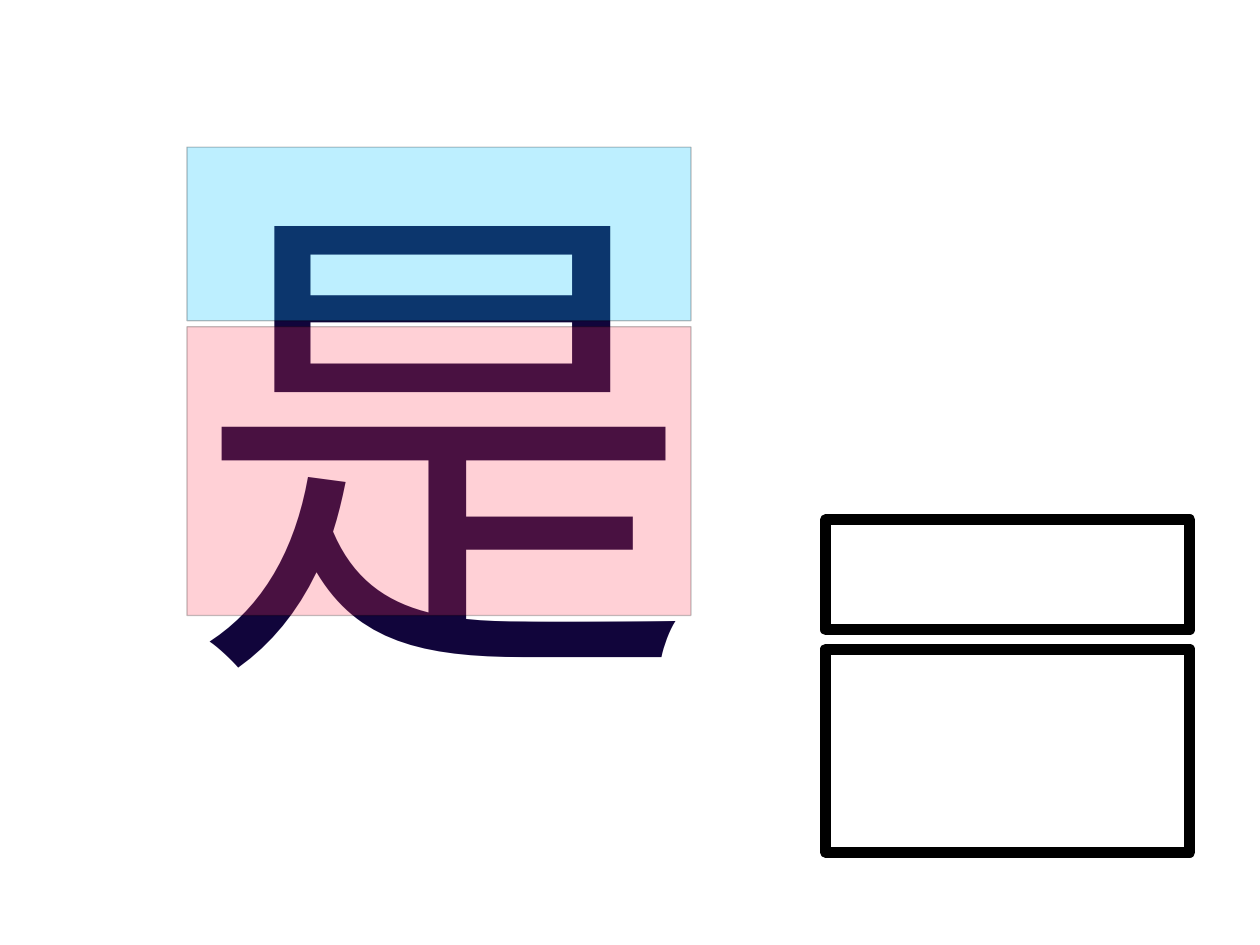
from dataclasses import dataclass
from typing import Optional

from lxml import etree
from pptx import Presentation
from pptx import util as u
from pptx.dml.color import RGBColor
from pptx.enum import shapes, text
from pptx.oxml import ns

BLACK = RGBColor(0x00, 0x00, 0x00)
INK = RGBColor(0x11, 0x05, 0x3B)
SKY = RGBColor(0x00, 0xC5, 0xFF)
ROSE = RGBColor(0xFF, 0x3B, 0x57)
FONT = "Arial"


@dataclass(frozen=True)
class Frame:
    left: float
    top: float
    width: float
    height: float
    line_width: float
    fill: Optional[RGBColor] = None
    opacity: int = 100


FRAMES = [
    Frame(5.36, 4.22, 14.45, 4.98, 1, SKY, 26),
    Frame(5.36, 9.37, 14.45, 8.28, 1, ROSE, 24),
    Frame(23.67, 18.62, 10.44, 5.82, 9),
    Frame(23.67, 14.91, 10.44, 3.15, 9),
]


def add_character(page, character: str) -> None:
    box = page.shapes.add_textbox(u.Cm(5.16), u.Cm(3.4), u.Cm(20.07), u.Cm(14.86))
    frame = box.text_frame
    frame.word_wrap = True
    frame.auto_size = text.MSO_AUTO_SIZE.SHAPE_TO_FIT_TEXT
    frame.margin_left = frame.margin_right = u.Cm(0.2)
    frame.margin_top = frame.margin_bottom = u.Cm(0.2)
    frame.text = character
    para = frame.paragraphs[0]
    para._p.get_or_add_pPr().set("marL", str(u.Cm(0.15)))
    span = para.runs[0]
    span.font.size = u.Pt(408)
    span.font.name = FONT
    span.font.color.rgb = INK
    east_asian = etree.SubElement(span._r.get_or_add_rPr(), ns.qn("a:ea"))
    east_asian.set("typeface", FONT)


def add_frame(page, frame: Frame) -> None:
    box = page.shapes.add_shape(
        shapes.MSO_SHAPE.RECTANGLE,
        u.Cm(frame.left), u.Cm(frame.top), u.Cm(frame.width), u.Cm(frame.height),
    )
    box.shadow.inherit = False
    if frame.fill is None:
        box.fill.background()
    else:
        box.fill.solid()
        box.fill.fore_color.rgb = frame.fill
    box.line.color.rgb = BLACK
    box.line.width = u.Pt(frame.line_width)
    etree.SubElement(box.line._get_or_add_ln(), ns.qn("a:round"))
    if frame.opacity < 100:
        for color in box._element.spPr.iter(ns.qn("a:srgbClr")):
            alpha = etree.SubElement(color, ns.qn("a:alpha"))
            alpha.set("val", str(frame.opacity * 1000))


def main() -> None:
    deck = Presentation()
    deck.slide_width = u.Cm(36.12)
    deck.slide_height = u.Cm(27.1)
    page = deck.slides.add_slide(deck.slide_layouts[6])
    add_character(page, "是")
    for frame in FRAMES:
        add_frame(page, frame)
    deck.save("out.pptx")


if __name__ == "__main__":
    main()
